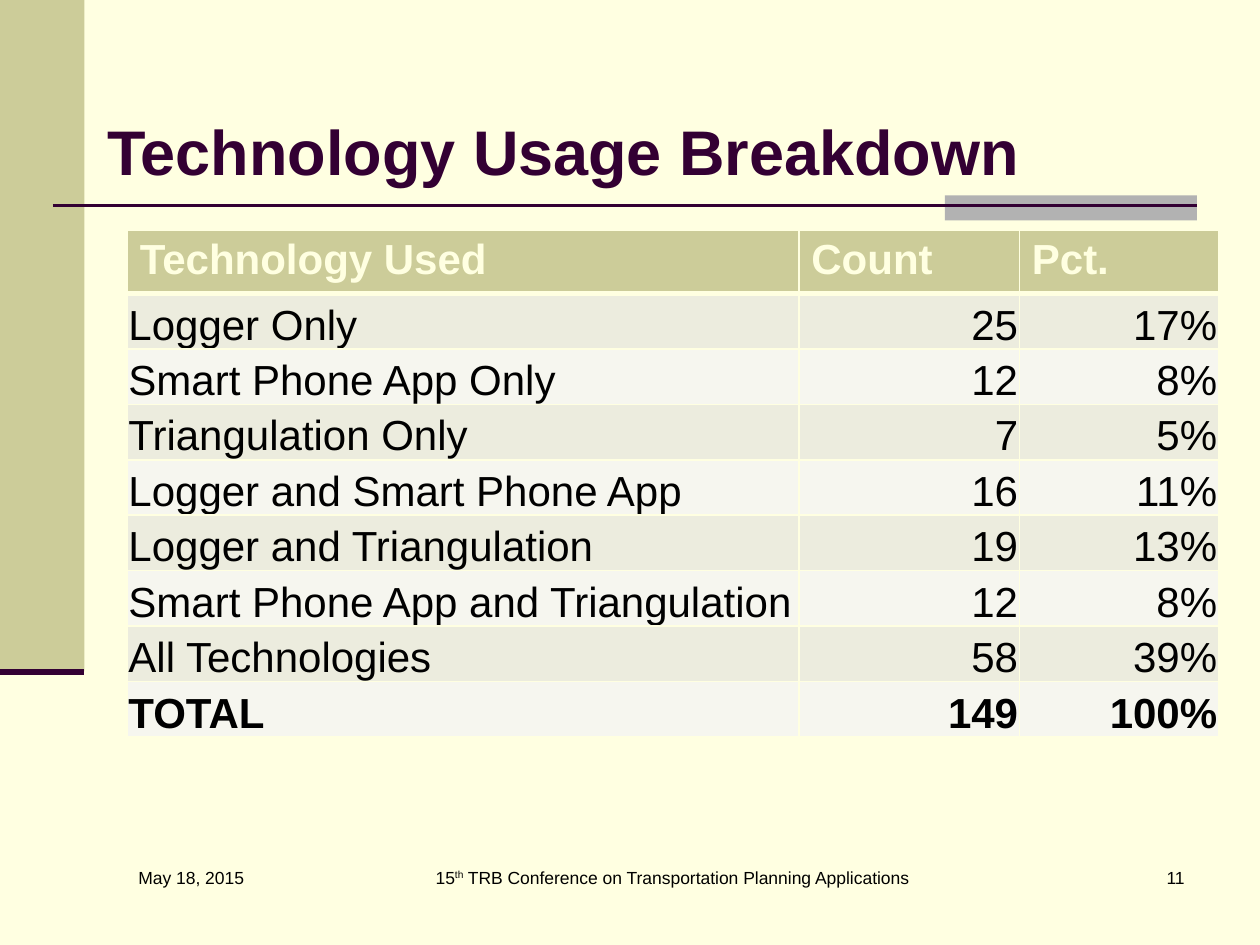
from dataclasses import dataclass
from lxml import etree
from pptx import Presentation
from pptx.dml.color import RGBColor
from pptx.enum.shapes import MSO_CONNECTOR, MSO_SHAPE
from pptx.enum.text import MSO_ANCHOR, PP_ALIGN
from pptx.oxml.ns import qn
from pptx.util import Inches, Pt

RECT, STRAIGHT = MSO_SHAPE.RECTANGLE, MSO_CONNECTOR.STRAIGHT
LEFT, CENTER, RIGHT = PP_ALIGN.LEFT, PP_ALIGN.CENTER, PP_ALIGN.RIGHT
MIDDLE, BOTTOM = MSO_ANCHOR.MIDDLE, MSO_ANCHOR.BOTTOM


@dataclass(frozen=True)
class Theme:
    font: str = "Arial"
    paper: str = "FFFFE1"
    olive: str = "CCCC99"
    gray: str = "B2B2B2"
    plum: str = "330033"
    text: str = "000000"
    bands: tuple = ("ECECDE", "F6F6EF")
    title_size: int = 36
    table_size: int = 24
    footer_size: int = 10


T = Theme()

# Content
TITLE = "Technology Usage Breakdown"
HEADER = ("Technology Used", "Count", "Pct.")
USAGE = [
    ("Logger Only", "25", "17%"),
    ("Smart Phone App Only", "12", "8%"),
    ("Triangulation Only", "7", "5%"),
    ("Logger and Smart Phone App", "16", "11%"),
    ("Logger and Triangulation", "19", "13%"),
    ("Smart Phone App and Triangulation", "12", "8%"),
    ("All Technologies", "58", "39%"),
]
TOTAL = ("TOTAL", "149", "100%")
# Stacked build-up of the table: (left, number of usage rows filled in)
STAGES = [(1, 3), (1, 6), (1.01, 7)]
# Footer: (left, width, alignment, runs as (text, superscript))
FOOTERS = [
    (1, 2.17, LEFT, [("May 18, 2015", False)]),
    (1.42, 7.83, CENTER, [
        ("15", False), ("th", True),
        (" TRB Conference on Transportation Planning Applications", False)]),
    (7.42, 2.08, RIGHT, [("11", False)]),
]

# Layout in inches
SLIDE_W, SLIDE_H = 10, 7.5
SIDEBAR_W, SIDEBAR_H = 0.67, 5.33
RULE_Y, RIGHT_EDGE = 1.63, 9.5
TABLE_Y = 1.83
COLS = (5.33, 1.75, 1.58)
HEADER_H, ROW_H = 0.5, 0.44
FOOTER_Y, FOOTER_H = 6.83, 0.5


def rgb(color):
    return RGBColor.from_string(color)


def style(r, size, color, bold=False):
    r.font.name, r.font.size, r.font.bold = T.font, Pt(size), bold
    r.font.color.rgb = rgb(color)


def add_block(slide, x, y, w, h, color):
    sp = slide.shapes.add_shape(RECT, *map(Inches, (x, y, w, h)))
    sp.shadow.inherit = False
    sp.fill.solid()
    sp.fill.fore_color.rgb = rgb(color)
    sp.line.fill.background()


def add_rule(slide, x1, x2, y, width):
    ln = slide.shapes.add_connector(STRAIGHT, *map(Inches, (x1, y, x2, y)))
    ln.line.color.rgb = rgb(T.plum)
    ln.line.width = Pt(width)
    etree.SubElement(ln._element.spPr, qn("a:effectLst"))


def add_borders(cell, top, bottom):
    tcPr = cell._tc.get_or_add_tcPr()
    for side, width in (("L", 1), ("R", 1), ("T", top), ("B", bottom)):
        ln = etree.SubElement(tcPr, qn(f"a:ln{side}"), w=str(Pt(width)))
        fill = etree.SubElement(ln, qn("a:solidFill"))
        etree.SubElement(fill, qn("a:srgbClr"), val=T.paper)


def fill_cell(cell, text, row, col):
    head = row == 0
    # The thick rule lies between the header and the first row
    add_borders(cell, 3 if row == 1 else 1, 3 if head else 1)
    cell.fill.solid()
    cell.fill.fore_color.rgb = rgb(T.olive if head else T.bands[(row - 1) % 2])
    if not head:
        cell.vertical_anchor = BOTTOM
        cell.margin_left = cell.margin_right = cell.margin_top = Inches(0.01)
        cell.margin_bottom = 0
    if text:
        p = cell.text_frame.paragraphs[0]
        p.text = text
        p.alignment = RIGHT if col and not head else LEFT
        style(p.runs[0], T.table_size, T.paper if head else T.text,
              head or row == len(USAGE) + 1)


def add_usage_table(slide, x, filled):
    blanks = [("",) * len(COLS)] * (len(USAGE) - filled)
    rows = [HEADER, *USAGE[:filled], *blanks, TOTAL]
    heights = [HEADER_H] + [ROW_H] * (len(rows) - 1)
    box = map(Inches, (x, TABLE_Y, sum(COLS), sum(heights)))
    table = slide.shapes.add_table(len(rows), len(COLS), *box).table
    for col, w in zip(table.columns, COLS):
        col.width = Inches(w)
    for i, (values, h) in enumerate(zip(rows, heights)):
        table.rows[i].height = Inches(h)
        for j, text in enumerate(values):
            fill_cell(table.cell(i, j), text, i, j)


def add_title(slide):
    sp = slide.shapes.title
    sp.left, sp.top, sp.width, sp.height = map(Inches, (0.75, 0.91, 9, 0.65))
    tf = sp.text_frame
    tf.text = TITLE
    tf.vertical_anchor = MIDDLE
    p = tf.paragraphs[0]
    p.alignment, p.line_spacing = LEFT, 0.9
    style(p.runs[0], T.title_size, T.plum, True)


def add_footer(slide, x, w, align, runs):
    box = map(Inches, (x, FOOTER_Y, w, FOOTER_H))
    tf = slide.shapes.add_textbox(*box).text_frame
    tf.word_wrap = True
    p = tf.paragraphs[0]
    p.alignment = align
    for text, raised in runs:
        r = p.add_run()
        r.text = text
        style(r, T.footer_size, T.text)
        if raised:
            r.font._element.set("baseline", "30000")


def main():
    prs = Presentation()
    prs.slide_width, prs.slide_height = Inches(SLIDE_W), Inches(SLIDE_H)
    slide = prs.slides.add_slide(prs.slide_layouts[5])
    slide.background.fill.solid()
    slide.background.fill.fore_color.rgb = rgb(T.paper)

    # Sidebar, accent and rules
    add_block(slide, 0, 0, SIDEBAR_W, SIDEBAR_H, T.olive)
    add_block(slide, RIGHT_EDGE - 2, 1.55, 2, 0.2, T.gray)
    add_rule(slide, 0.42, RIGHT_EDGE, RULE_Y, 1.5)
    add_rule(slide, 0, SIDEBAR_W, SIDEBAR_H, 3.5)

    # Title, table stages and footer
    add_title(slide)
    for stage in STAGES:
        add_usage_table(slide, *stage)
    for footer in FOOTERS:
        add_footer(slide, *footer)

    prs.save("out.pptx")


if __name__ == "__main__":
    main()
